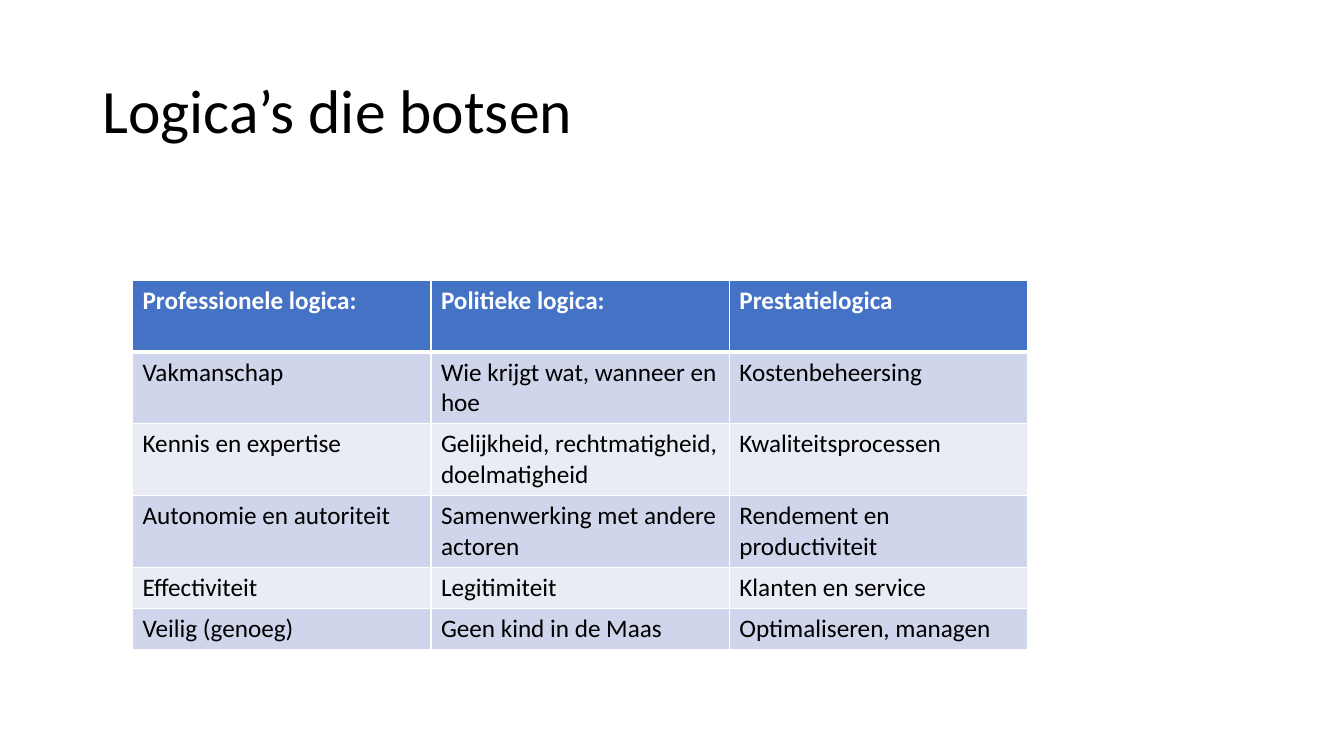
from dataclasses import dataclass

from lxml import etree
from pptx import Presentation
from pptx import util as u
from pptx.dml.color import RGBColor
from pptx.enum import text
from pptx.oxml import ns

BLACK = RGBColor(0x00, 0x00, 0x00)
WHITE = RGBColor(0xFF, 0xFF, 0xFF)
HEADER_BLUE = RGBColor(0x44, 0x72, 0xC4)
BAND_DARK = RGBColor(0xCF, 0xD5, 0xEA)
BAND_LIGHT = RGBColor(0xE9, 0xEB, 0xF5)
FONT = "Calibri"
COLUMN_WIDTH = u.Cm(7.52)
ONE_LINE = u.Cm(1.04)
TWO_LINES = u.Cm(1.81)


@dataclass
class LogicRow:
    labels: tuple[str, str, str]
    height: int


ROWS = [
    LogicRow(("Professionele logica:", "Politieke logica:", "Prestatielogica"), TWO_LINES),
    LogicRow(("Vakmanschap", "Wie krijgt wat, wanneer en hoe", "Kostenbeheersing"), TWO_LINES),
    LogicRow(("Kennis en expertise", "Gelijkheid, rechtmatigheid, doelmatigheid",
              "Kwaliteitsprocessen"), TWO_LINES),
    LogicRow(("Autonomie en autoriteit", "Samenwerking met andere actoren",
              "Rendement en productiviteit"), TWO_LINES),
    LogicRow(("Effectiviteit", "Legitimiteit", "Klanten en service"), ONE_LINE),
    LogicRow(("Veilig (genoeg)", "Geen kind in de Maas", "Optimaliseren, managen"), ONE_LINE),
]


def add_span(para, wording: str, size: float, color: RGBColor, bold: bool = False) -> None:
    span = para.add_run()
    span.text = wording
    span.font.name = FONT
    span.font.size = u.Pt(size)
    span.font.bold = bold
    span.font.color.rgb = color


def add_borders(cell, top: float, bottom: float) -> None:
    """Give the cell white borders; call before setting its fill."""
    properties = cell._tc.get_or_add_tcPr()
    for side, width in (("L", 1), ("R", 1), ("T", top), ("B", bottom)):
        line = etree.SubElement(properties, ns.qn(f"a:ln{side}"), w=str(u.Pt(width)))
        fill = etree.SubElement(line, ns.qn("a:solidFill"))
        etree.SubElement(fill, ns.qn("a:srgbClr"), val=str(WHITE))


def add_title(page, wording: str) -> None:
    title = page.shapes.title
    title.left, title.top = u.Cm(2.33), u.Cm(1.01)
    title.width, title.height = u.Cm(29.21), u.Cm(3.68)
    title.text_frame.vertical_anchor = text.MSO_ANCHOR.MIDDLE
    para = title.text_frame.paragraphs[0]
    para.alignment = text.PP_ALIGN.LEFT
    para.line_spacing = 0.9
    add_span(para, wording, 44, BLACK)


def add_logic_table(page, rows: list[LogicRow]) -> None:
    column_count = len(rows[0].labels)
    table = page.shapes.add_table(
        len(rows), column_count, u.Cm(3.34), u.Cm(7.06),
        COLUMN_WIDTH * column_count, sum(row.height for row in rows)).table
    for column in table.columns:
        column.width = COLUMN_WIDTH
    for index, row in enumerate(rows):
        table.rows[index].height = row.height
        header = index == 0
        band = HEADER_BLUE if header else BAND_DARK if index % 2 else BAND_LIGHT
        for cell, label in zip(table.rows[index].cells, row.labels):
            add_borders(cell, top=3 if index == 1 else 1, bottom=3 if header else 1)
            cell.fill.solid()
            cell.fill.fore_color.rgb = band
            add_span(cell.text_frame.paragraphs[0], label, 18,
                     WHITE if header else BLACK, header)


def main() -> None:
    deck = Presentation()
    deck.slide_width, deck.slide_height = u.Cm(33.87), u.Cm(19.05)
    page = deck.slides.add_slide(deck.slide_layouts.get_by_name("Title Only"))
    add_title(page, "Logica’s die botsen")
    add_logic_table(page, ROWS)
    deck.save("out.pptx")


if __name__ == "__main__":
    main()
